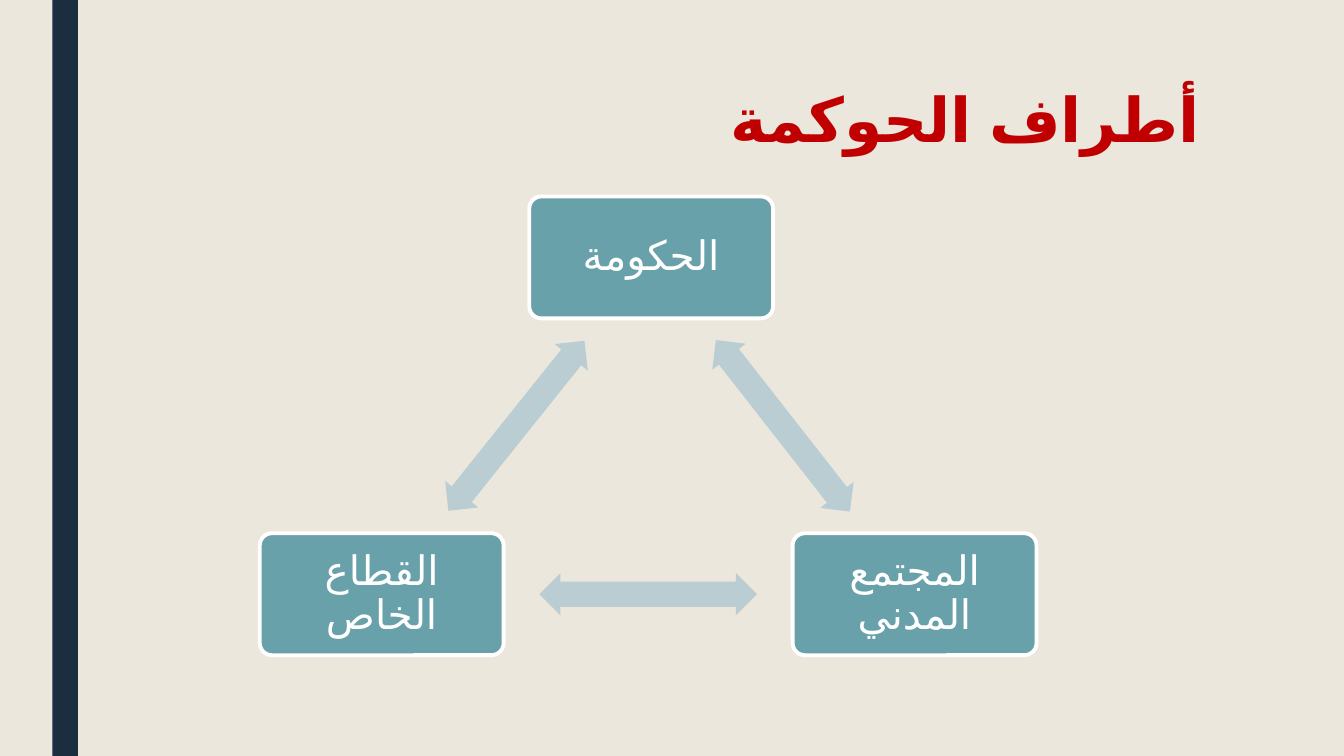
from math import atan2, degrees

from pptx import Presentation as Deck
from pptx.dml.color import RGBColor as Rgb
from pptx.enum.lang import MSO_LANGUAGE_ID as Lang
from pptx.enum.shapes import MSO_SHAPE as Kind
from pptx.enum.text import MSO_ANCHOR as Anchor, PP_ALIGN as Align
from pptx.oxml.ns import qn
from pptx.util import Inches, Pt

WIDE, HIGH = 13.33, 7.5


def tint(code):
    return Rgb.from_string(code)


def write(frame, text, font, size, color, bold=False, align=Align.CENTER,
          anchor=Anchor.MIDDLE, inset=(0.12, 0.12), space=None, rtl=False):
    frame.word_wrap = True
    frame.vertical_anchor = anchor
    frame.margin_left = frame.margin_right = Inches(inset[0])
    frame.margin_top = frame.margin_bottom = Inches(inset[1])
    para = frame.paragraphs[0]
    para.alignment = align
    para.line_spacing = space
    if rtl:
        para._p.get_or_add_pPr().set("rtl", "1")
    run = para.add_run()
    run.text = text
    run.font.name = font
    run.font.size = Pt(size)
    run.font.bold = bold
    run.font.color.rgb = tint(color)
    run.font.language_id = Lang.ARABIC_EGYPT
    style = run._r.get_or_add_rPr()
    style.append(style.makeelement(qn("a:cs"), {"typeface": font}))


class Page:
    """Draws styled elements on one slide, with lengths in percent of its size."""

    navy, teal, pale = "1A2E40", "69A1AB", "B9CDD2"
    sand, white, red = "EBE7DD", "FFFFFF", "C00000"
    head, body = "Arial", "Cabin"
    box, arm = (18.15, 16.13), (16.2, 5.6)

    def __init__(self, deck):
        self.slide = deck.slides.add_slide(deck.slide_layouts[6])
        fill = self.slide.background.fill
        fill.solid()
        fill.fore_color.rgb = tint(self.sand)

    def place(self, left, top, width, height):
        return [Inches(part * full / 100) for part, full in
                zip((left, top, width, height), (WIDE, HIGH) * 2)]

    def shape(self, kind, area, color):
        item = self.slide.shapes.add_shape(kind, *self.place(*area))
        item.shadow.inherit = False
        item.fill.solid()
        item.fill.fore_color.rgb = tint(color)
        item.line.fill.background()
        return item

    def mid(self, kind, spot, size, color):
        area = [at - part / 2 for at, part in zip(spot, size)]
        return self.shape(kind, (*area, *size), color)

    def band(self, left, width):
        self.shape(Kind.RECTANGLE, (left, 0, width, 100), self.navy)

    def title(self, text, area):
        item = self.slide.shapes.add_textbox(*self.place(*area))
        write(item.text_frame, text, self.head, 44, self.red, bold=True,
              align=Align.JUSTIFY, anchor=Anchor.TOP, inset=(0.1, 0.05), rtl=True)

    def party(self, text, spot):
        item = self.mid(Kind.ROUNDED_RECTANGLE, spot, self.box, self.teal)
        item.adjustments[0] = 0.1
        item.line.color.rgb = tint(self.white)
        item.line.width = Pt(2.75)
        write(item.text_frame, text, self.body, 29, self.white, space=0.9)

    def link(self, start, end):
        spot = [(one + two) / 2 for one, two in zip(start, end)]
        item = self.mid(Kind.LEFT_RIGHT_ARROW, spot, self.arm, self.pale)
        item.adjustments[0] = 0.6
        item.adjustments[1] = 0.5
        run, drop = (end[0] - start[0]) * WIDE, (end[1] - start[1]) * HIGH
        item.rotation = degrees(atan2(drop, run)) % 360


def main():
    deck = Deck()
    deck.slide_width, deck.slide_height = Inches(WIDE), Inches(HIGH)
    page = Page(deck)
    page.band(3.9, 1.9)
    page.title("أطراف الحوكمة", (11.25, 10, 78.75, 21.6))
    parties = {
        "الحكومة": (48.45, 34.05),
        "القطاع الخاص": (28.4, 78.6),
        "المجتمع المدني": (68.05, 78.6),
    }
    spots = list(parties.values())
    for (name, spot), after in zip(parties.items(), spots[1:] + spots[:1]):
        page.party(name, spot)
        page.link(spot, after)
    deck.save("out.pptx")


if __name__ == "__main__":
    main()
